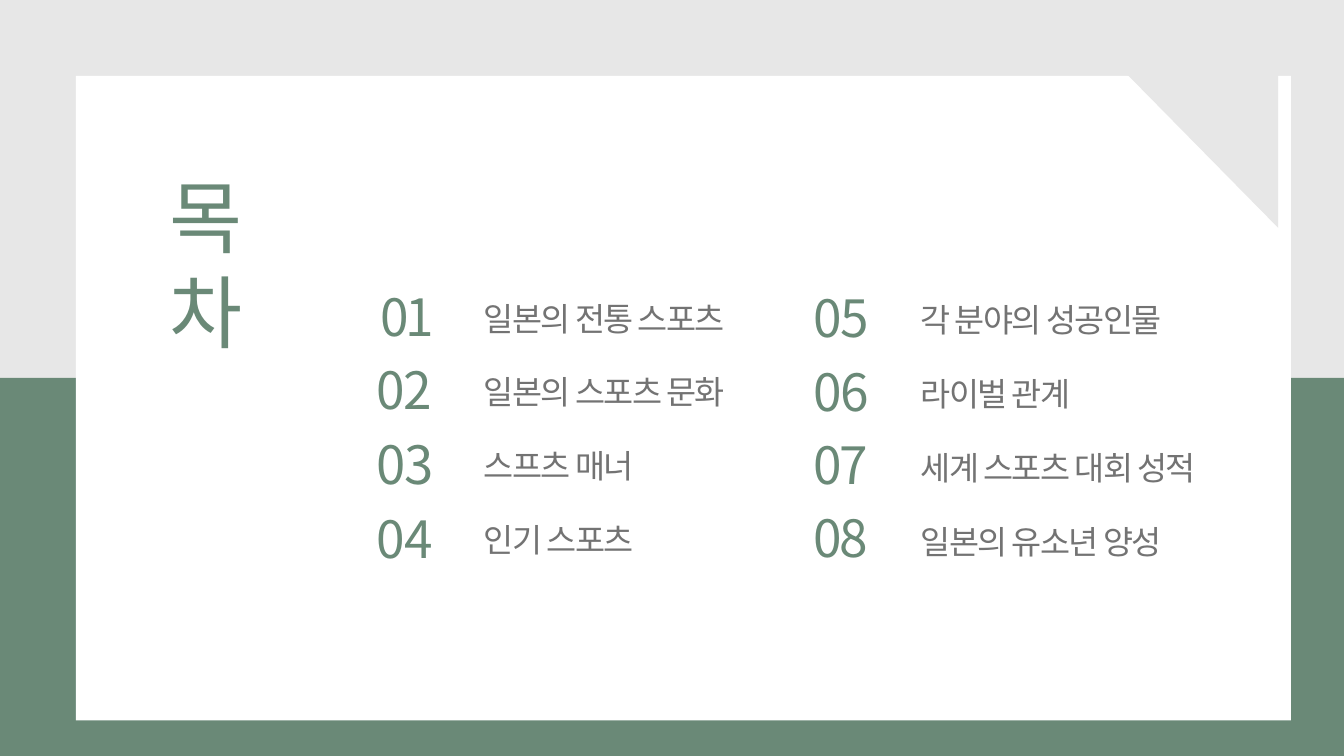
from pptx import Presentation, util as u
from pptx.dml.color import RGBColor
from pptx.enum import shapes, text
from pptx.oxml.ns import qn

WIDTH, HEIGHT = 20, 11.25
FONT = "Noto Sans CJK KR"
GREEN, GREY, PALE, WHITE = "6A8977", "737373", "E7E7E7", "FFFFFF"


def color(value):
    return RGBColor.from_string(value)


class Agenda:
    """Holds the style and the current slide; lengths are inches on its grid."""

    first_row, row_step = 4.43, 1.1
    number_columns, topic_columns = (5.6, 12.1), (7.2, 13.7)
    number_tops, pair_step = (4.05, 4.07), 2.18
    topic_width, topic_tracking = 4.4, -1.7

    def __init__(self, deck):
        self.page = deck.slides.add_slide(deck.slide_layouts[6])

    def paint(self, shape, fill):
        shape.shadow.inherit = False
        shape.fill.solid()
        shape.fill.fore_color.rgb = color(fill)
        shape.line.fill.background()

    def block(self, left, top, width, height, fill):
        shape = self.page.shapes.add_shape(
            shapes.MSO_SHAPE.RECTANGLE, *map(u.Inches, (left, top, width, height)))
        self.paint(shape, fill)

    def polygon(self, points, fill):
        corners = [(u.Inches(x), u.Inches(y)) for x, y in points]
        builder = self.page.shapes.build_freeform(*corners[0])
        builder.add_line_segments(corners[1:], close=True)
        self.paint(builder.convert_to_shape(), fill)

    def label(self, left, top, width, height, lines, ink, inset=0.01):
        """Each line is (words, size, tracking, space before, indent)."""
        box = self.page.shapes.add_textbox(*map(u.Inches, (left, top, width, height)))
        frame = box.text_frame
        style = {"word_wrap": True, "auto_size": text.MSO_AUTO_SIZE.SHAPE_TO_FIT_TEXT,
                 "margin_left": 0, "margin_right": 0, "margin_bottom": 0,
                 "margin_top": u.Inches(inset)}
        for name, value in style.items():
            setattr(frame, name, value)
        for index, (words, size, tracking, before, indent) in enumerate(lines):
            para = frame.add_paragraph() if index else frame.paragraphs[0]
            para.space_before = u.Pt(before)
            para._p.get_or_add_pPr().set("marL", str(u.Inches(indent)))
            span = para.add_run()
            span.text = words
            for name, value in {"name": FONT, "size": u.Pt(size)}.items():
                setattr(span.font, name, value)
            span.font.color.rgb = color(ink)
            props = span.font._element
            props.set("spc", str(round(tracking * 100)))
            east = props.makeelement(qn("a:ea"), {"typeface": FONT})
            props.find(qn("a:latin")).addnext(east)

    def topic(self, column, row, words):
        top = self.first_row + 0.02 * column + row * self.row_step
        self.label(self.topic_columns[column], top, self.topic_width, 0.61,
                   [(words, 35, self.topic_tracking, 1, 0)], GREY)

    def numbers(self, column, pair, lines):
        top = self.number_tops[column] + pair * self.pair_step
        self.label(self.number_columns[column], top, 0.9, 2.22, lines, GREEN, 0.19)


def main():
    deck = Presentation()
    deck.slide_width, deck.slide_height = u.Inches(WIDTH), u.Inches(HEIGHT)
    agenda = Agenda(deck)

    # Two-tone background, white card and cut corner
    agenda.block(0, 0, WIDTH, HEIGHT / 2, PALE)
    agenda.block(0, HEIGHT / 2, WIDTH, HEIGHT / 2, GREEN)
    agenda.block(1.13, 1.13, 18.08, 9.59, WHITE)
    agenda.polygon([(19.02, 0.82), (19.02, 3.39), (16.49, 0.82)], PALE)

    # Title
    agenda.label(2.51, 2.49, 1.91, 1.44, [("목차", 85, -18.1, 1, 0.01)], GREEN)

    # Numbers, two to a box: (words, size, tracking, space before, indent)
    pairs = [
        (0, 0, ("01", 55, -4, 13.6, 0.06), ("02", 55, -1.6, 12.6, 0)),
        (0, 1, ("03", 56.5, -1.4, 14.2, 0), ("04", 55, -0.5, 12.9, 0)),
        (1, 0, ("05", 55, -1.6, 13.8, 0), ("06", 55, -1.4, 12.8, 0)),
        (1, 1, ("07", 55, -1.9, 13.8, 0), ("08", 55, -1.7, 12.8, 0)),
    ]
    for column, pair, *lines in pairs:
        agenda.numbers(column, pair, lines)

    # Topics, one list to a column
    topics = [
        ["일본의 전통 스포츠", "일본의 스포츠 문화", "스프츠 매너", "인기 스포츠"],
        ["각 분야의 성공인물", "라이벌 관계", "세계 스포츠 대회 성적", "일본의 유소년 양성"],
    ]
    for column, entries in enumerate(topics):
        for row, words in enumerate(entries):
            agenda.topic(column, row, words)

    deck.save("out.pptx")


if __name__ == "__main__":
    main()
